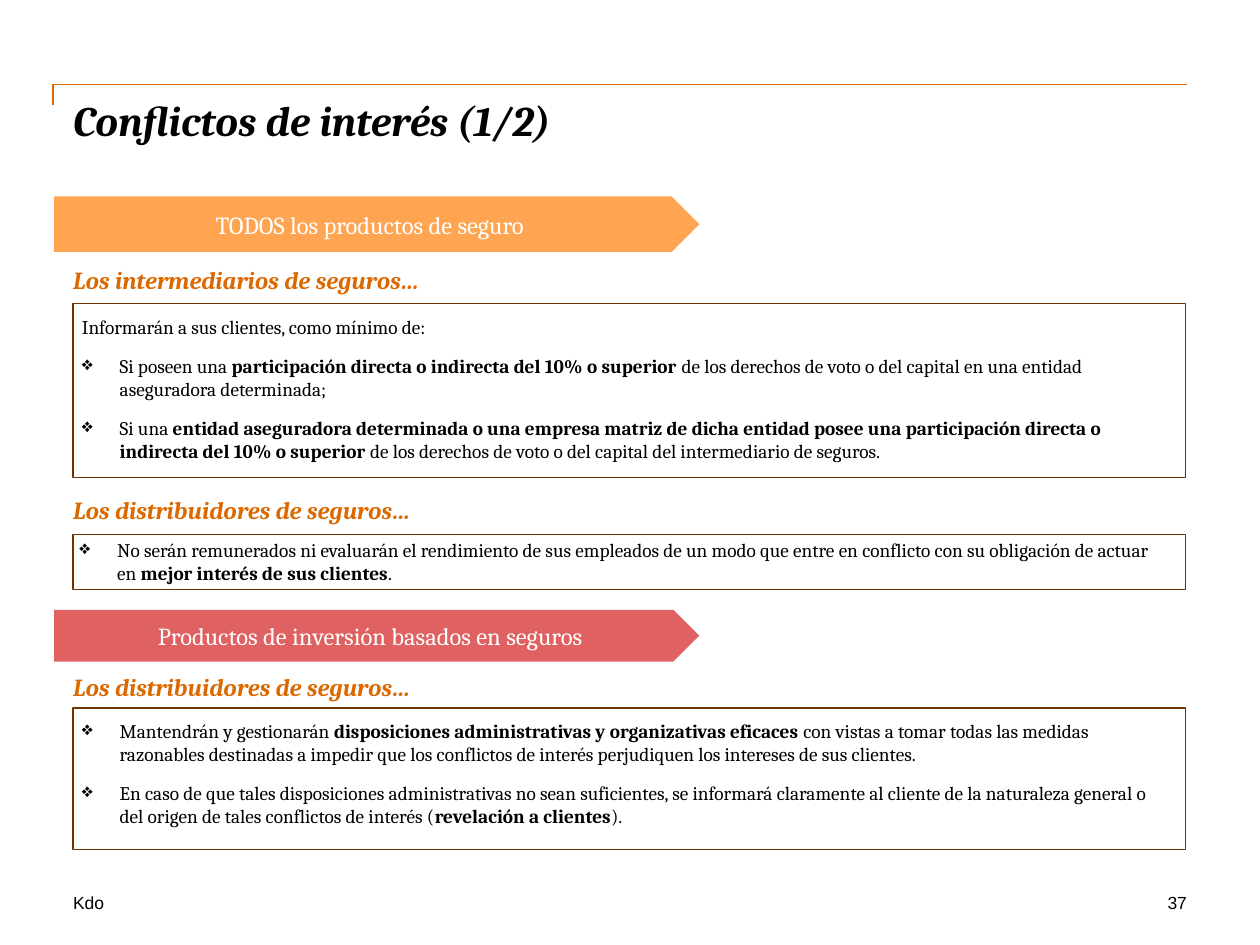
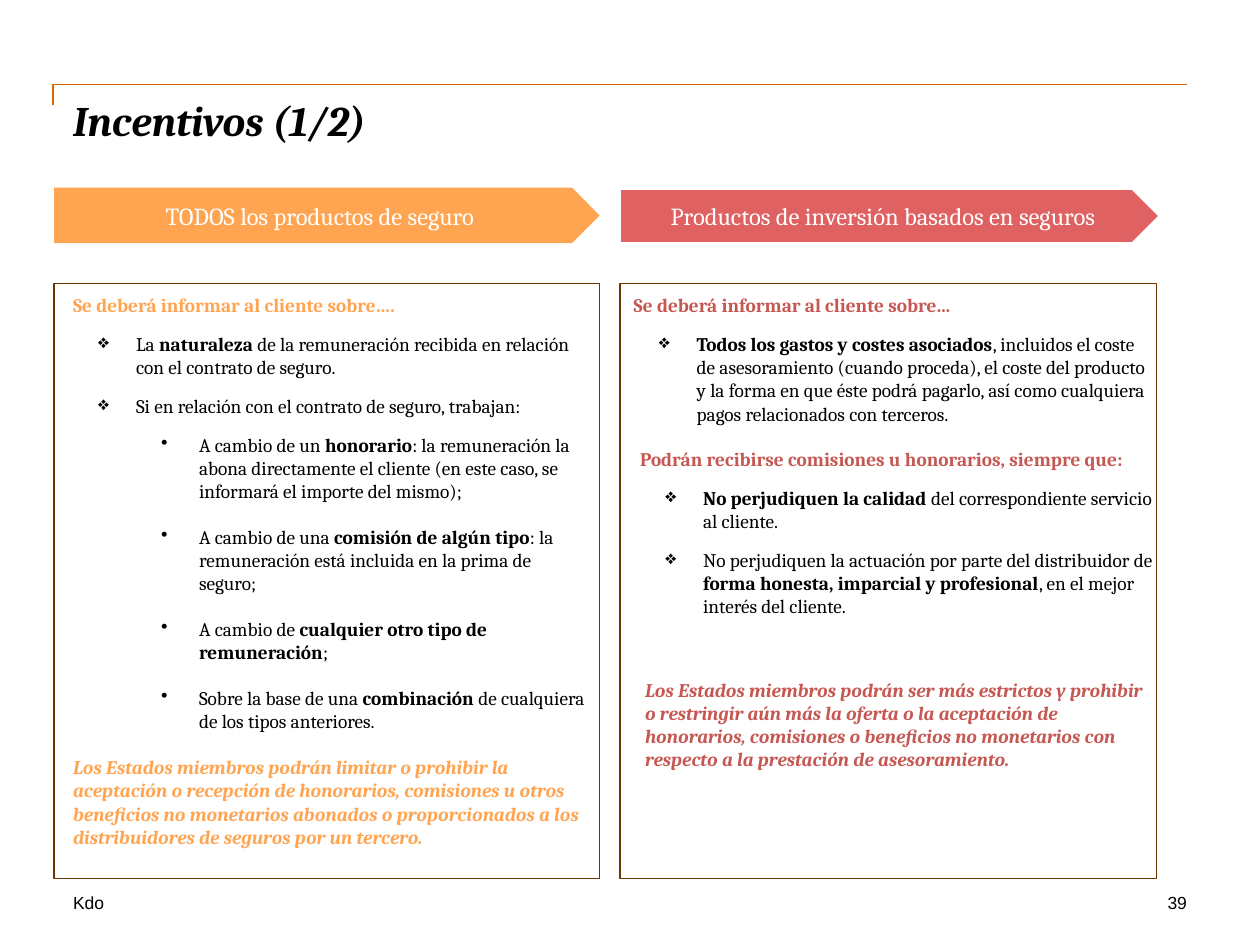
import pptx
import pptx.util
import pptx.dml.color
import pptx.enum.shapes
import pptx.enum.text
import pptx.oxml.ns
import lxml.etree

Inches = pptx.util.Inches
Pt = pptx.util.Pt
SHAPES = pptx.enum.shapes.MSO_SHAPE
ALIGN = pptx.enum.text.PP_ALIGN
ANCHOR = pptx.enum.text.MSO_ANCHOR

COLOURS = {
    "black": "000000",
    "white": "FFFFFF",
    "accent": "DC6900",
    "border": "6E3500",
    "orange": "FFA451",
    "coral": "E06161",
    "red": "C65853",
}
FIRM = "Kdo"
ALL_PRODUCTS = "TODOS los productos de seguro"
INVESTMENT_PRODUCTS = "Productos de inversión basados en seguros"
DIAMOND = {"left": 0.5, "hanging": 0.3, "bullet": "❖"}
DOT = {"left": 1, "hanging": 0.3, "bullet": "•", "after": 13}
INDENTED = {"left": 0.2}


def colour(name):
    return pptx.dml.color.RGBColor.from_string(COLOURS[name])


def write(para, text, size=11, font="Cambria", color="black", bold=False, italic=False,
          align=ALIGN.LEFT, after=9, left=0, hanging=0, bullet=None):
    para.alignment = align
    para.space_after = Pt(after)
    properties = para._p.get_or_add_pPr()
    properties.set("marL", str(Inches(left)))
    properties.set("indent", str(Inches(-hanging)))
    if bullet:
        mark = lxml.etree.SubElement(properties, pptx.oxml.ns.qn("a:buChar"))
        mark.set("char", bullet)
    for index, part in enumerate(text.split("**")):
        if part:
            span = para.add_run()
            span.text = part
            span.font.size = Pt(size)
            span.font.name = font
            span.font.bold = bold or index % 2 == 1
            span.font.italic = italic
            span.font.color.rgb = colour(color)


def add_text(page, left, top, width, height, *paragraphs):
    box = page.shapes.add_textbox(Inches(left), Inches(top), Inches(width), Inches(height))
    frame = box.text_frame
    frame.word_wrap = True
    frame.margin_left = frame.margin_right = frame.margin_top = frame.margin_bottom = 0
    for index, (text, style) in enumerate(paragraphs):
        para = frame.add_paragraph() if index else frame.paragraphs[0]
        write(para, text, **style)


def add_frame(page, left, top, width, height):
    frame = page.shapes.add_shape(SHAPES.RECTANGLE, Inches(left), Inches(top),
                                  Inches(width), Inches(height))
    frame.shadow.inherit = False
    frame.fill.background()
    frame.line.color.rgb = colour("border")
    frame.line.width = Pt(0.75)


def add_banner(page, left, top, width, height, text, fill):
    banner = page.shapes.add_shape(SHAPES.PENTAGON, Inches(left), Inches(top),
                                   Inches(width), Inches(height))
    banner.shadow.inherit = False
    banner.fill.solid()
    banner.fill.fore_color.rgb = colour(fill)
    banner.line.fill.background()
    banner.text_frame.word_wrap = True
    banner.text_frame.vertical_anchor = ANCHOR.MIDDLE
    write(banner.text_frame.paragraphs[0], text, size=14, color="white",
          align=ALIGN.CENTER, after=0)


def add_subtitle(page, top, text):
    add_text(page, 0.58, top, 3.87, 0.38,
             (text, {"size": 14, "color": "accent", "bold": True, "italic": True}))


def add_title_rule(page):
    builder = page.shapes.build_freeform(Inches(0.42), Inches(0.83))
    builder.add_line_segments([(Inches(0.42), Inches(0.67)), (Inches(9.42), Inches(0.67))],
                              close=False)
    rule = builder.convert_to_shape()
    rule.shadow.inherit = False
    rule.fill.background()
    rule.line.color.rgb = colour("accent")
    rule.line.width = Pt(1)


def add_page(deck, title, number):
    page = deck.slides.add_slide(deck.slide_layouts[6])
    footer = {"size": 10, "font": "Arial", "after": 0}
    add_title_rule(page)
    add_text(page, 0.58, 0.75, 8.83, 1, (title, {"size": 24, "bold": True, "italic": True}))
    add_text(page, 0.58, 7.08, 2.83, 0.17, (FIRM, footer))
    add_text(page, 7.75, 7.08, 1.67, 0.17, (str(number), {**footer, "align": ALIGN.RIGHT}))
    return page


def build_conflicts(deck):
    page = add_page(deck, "Conflictos de interés (1/2)", 37)
    add_banner(page, 0.43, 1.56, 5.12, 0.44, ALL_PRODUCTS, "orange")
    add_banner(page, 0.43, 4.84, 5.12, 0.41, INVESTMENT_PRODUCTS, "coral")
    for top, height in ((2.41, 1.38), (4.24, 0.44), (5.62, 1.12)):
        add_frame(page, 0.58, top, 8.83, height)
    add_subtitle(page, 2.1, "Los intermediarios de seguros…")
    for top in (3.93, 5.33):
        add_subtitle(page, top, "Los distribuidores de seguros…")
    add_text(
        page, 0.45, 2.5, 8.75, 1.02,
        ("Informarán a sus clientes, como mínimo de:", INDENTED),
        ("Si poseen una **participación directa o indirecta del 10% o superior **de los "
         "derechos de voto o del capital en una entidad aseguradora determinada;", DIAMOND),
        ("Si una **entidad aseguradora determinada o una empresa matriz de dicha entidad "
         "posee una participación directa o indirecta del 10% o superior **de los derechos "
         "de voto o del capital del intermediario de seguros.", DIAMOND))
    add_text(
        page, 0.43, 4.27, 8.75, 0.58,
        ("No serán remunerados ni evaluarán el rendimiento de sus empleados de un modo que "
         "entre en conflicto con su obligación de actuar en **mejor interés de sus "
         "clientes**.", DIAMOND))
    add_text(
        page, 0.45, 5.71, 8.75, 1.02,
        ("Mantendrán y gestionarán **disposiciones administrativas y organizativas eficaces "
         "**con vistas a tomar todas las medidas razonables destinadas a impedir que los "
         "conflictos de interés perjudiquen los intereses de sus clientes.", DIAMOND),
        ("En caso de que tales disposiciones administrativas no sean suficientes, se "
         "informará claramente al cliente de la naturaleza general o del origen de tales "
         "conflictos de interés (**revelación a clientes**).", DIAMOND))


def build_incentives(deck):
    page = add_page(deck, "Incentivos (1/2)", 39)
    add_frame(page, 0.43, 2.25, 4.33, 4.72)
    add_frame(page, 4.92, 2.25, 4.26, 4.72)
    add_banner(page, 0.43, 1.49, 4.33, 0.44, ALL_PRODUCTS, "orange")
    add_banner(page, 4.93, 1.51, 4.26, 0.41, INVESTMENT_PRODUCTS, "coral")
    orange_heading = {"color": "orange", "bold": True}
    red_heading = {"color": "red", "bold": True}
    add_text(
        page, 0.58, 2.33, 4.1, 4.5,
        ("Se deberá informar al cliente sobre….", orange_heading),
        ("La **naturaleza **de la remuneración recibida en relación con el contrato de "
         "seguro.", DIAMOND),
        ("Si en relación con el contrato de seguro, trabajan:", DIAMOND),
        ("A cambio de un **honorario**: la remuneración la abona directamente el cliente "
         "(en este caso, se informará el importe del mismo);", DOT),
        ("A cambio de una **comisión de algún tipo**: la remuneración está incluida en la "
         "prima de seguro;", DOT),
        ("A cambio de **cualquier otro tipo de remuneración**;", DOT),
        ("Sobre la base de una **combinación** de cualquiera de los tipos anteriores.", DOT),
        ("Los Estados miembros podrán limitar o prohibir la aceptación o recepción de "
         "honorarios, comisiones u otros beneficios no monetarios abonados o proporcionados "
         "a los distribuidores de seguros por un tercero.",
         {**orange_heading, "italic": True}))
    add_text(
        page, 5.03, 2.33, 4.1, 1.1,
        ("Se deberá informar al cliente sobre…", red_heading),
        ("**Todos los gastos y costes asociados**, incluidos el coste de asesoramiento "
         "(cuando proceda), el coste del producto y la forma en que éste podrá pagarlo, así "
         "como cualquiera pagos relacionados con terceros.", DIAMOND))
    add_text(
        page, 5.08, 3.55, 4.11, 1.5,
        ("Podrán recibirse comisiones u honorarios, siempre que:", red_heading),
        ("**No perjudiquen la calidad **del correspondiente servicio al cliente.", DIAMOND),
        ("No perjudiquen la actuación por parte del distribuidor de **forma honesta, "
         "imparcial y profesional**, en el mejor interés del cliente.", DIAMOND))
    add_text(
        page, 4.92, 5.38, 4.27, 1,
        ("Los Estados miembros podrán ser más estrictos y prohibir o restringir aún más la "
         "oferta o la aceptación de honorarios, comisiones o beneficios no monetarios con "
         "respecto a la prestación de asesoramiento.",
         {**red_heading, **INDENTED, "italic": True}))


def main():
    deck = pptx.Presentation()
    deck.slide_width = Inches(10)
    deck.slide_height = Inches(7.5)
    build_conflicts(deck)
    build_incentives(deck)
    deck.save("out.pptx")


if __name__ == "__main__":
    main()
